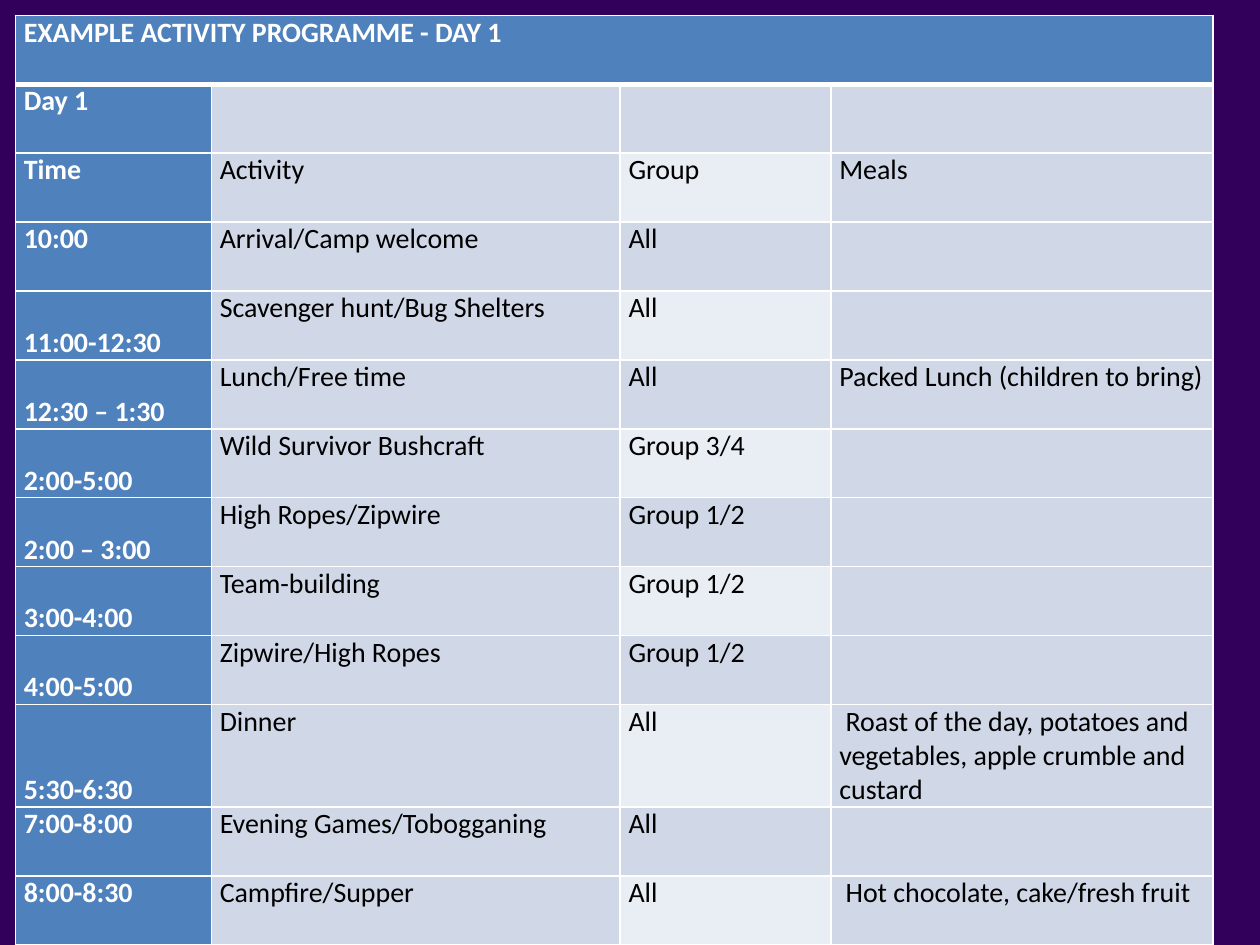
import pptx
import pptx.dml.color
import pptx.enum.text
import pptx.oxml
import pptx.oxml.ns
import pptx.util
from pptx.util import Cm

# Content
HEADING = "EXAMPLE ACTIVITY PROGRAMME - DAY 1"
PROGRAMME = [
    ("Day 1", "", "", ""),
    ("Time", "Activity", "Group", "Meals"),
    ("10:00", "Arrival/Camp welcome", "All", ""),
    ("11:00-12:30", "Scavenger hunt/Bug Shelters", "All", ""),
    ("12:30 – 1:30", "Lunch/Free time", "All", "Packed Lunch (children to bring)"),
    ("2:00-5:00", "Wild Survivor Bushcraft", "Group 3/4", ""),
    ("2:00 – 3:00", "High Ropes/Zipwire", "Group 1/2", ""),
    ("3:00-4:00", "Team-building", "Group 1/2", ""),
    ("4:00-5:00", "Zipwire/High Ropes", "Group 1/2", ""),
    ("5:30-6:30", "Dinner", "All",
     " Roast of the day, potatoes and vegetables, apple crumble and custard"),
    ("7:00-8:00", "Evening Games/Tobogganing", "All", ""),
    ("8:00-8:30", "Campfire/Supper", "All", " Hot chocolate, cake/fresh fruit"),
]
ROWS = [(HEADING, "", "", "")] + PROGRAMME
BOTTOM_TIMES = range(4, 11)  # rows whose time sits at the foot of the cell
GROUP_COLUMN = 2

# Theme and measures
THEME = {
    "background": "32005A", "accent": "4F81BD", "band": "D0D8E8",
    "light band": "E9EDF4", "line": "FFFFFF", "strong text": "FFFFFF",
    "text": "000000", "font": "Calibri", "size": 16,
    "thin line": 1, "thick line": 3,
}
COLUMN_WIDTHS = [3.95, 8.24, 4.25, 7.7]
ROW_HEIGHT = 1.39
MARGIN = 0.31
INSET = 0.17


def colour(name):
    return pptx.dml.color.RGBColor.from_string(THEME[name])


def add_border(cell, side, weight):
    line = pptx.oxml.parse_xml(
        f'<a:ln{side} {pptx.oxml.ns.nsdecls("a")} w="{pptx.util.Pt(THEME[weight])}">'
        f'<a:solidFill><a:srgbClr val="{THEME["line"]}"/></a:solidFill></a:ln{side}>')
    cell._tc.get_or_add_tcPr().append(line)


def fill_name(row, column):
    if row == 0 or column == 0:
        return "accent"
    if column == GROUP_COLUMN and row % 2 == 0:
        return "light band"
    return "band"


def format_cell(cell, row, column, words):
    # Borders: a thick rule divides the heading from the programme
    for side in "LRTB":
        is_rule = (row, side) in ((0, "B"), (1, "T"))
        add_border(cell, side, "thick line" if is_rule else "thin line")
    cell.fill.solid()
    cell.fill.fore_color.rgb = colour(fill_name(row, column))

    # Text
    cell.margin_left = cell.margin_right = Cm(INSET)
    cell.margin_top = cell.margin_bottom = Cm(0)
    if column == 0 and row in BOTTOM_TIMES:
        cell.vertical_anchor = pptx.enum.text.MSO_ANCHOR.BOTTOM
    else:
        cell.vertical_anchor = pptx.enum.text.MSO_ANCHOR.TOP
    para = cell.text_frame.paragraphs[0]
    para.text = words
    strong = row == 0 or column == 0
    for span in para.runs:
        span.font.name = THEME["font"]
        span.font.size = pptx.util.Pt(THEME["size"])
        span.font.bold = strong
        span.font.color.rgb = colour("strong text" if strong else "text")


def main():
    deck = pptx.Presentation()
    deck.slide_width, deck.slide_height = Cm(25.4), Cm(19.05)
    page = deck.slides.add_slide(deck.slide_layouts[6])
    page.background.fill.solid()
    page.background.fill.fore_color.rgb = colour("background")

    # Programme table
    table = page.shapes.add_table(
        len(ROWS), len(COLUMN_WIDTHS), Cm(MARGIN), Cm(MARGIN),
        Cm(sum(COLUMN_WIDTHS)), Cm(ROW_HEIGHT * len(ROWS))).table
    for column, width in zip(table.columns, COLUMN_WIDTHS):
        column.width = Cm(width)
    for row in table.rows:
        row.height = Cm(ROW_HEIGHT)
    for row, entries in enumerate(ROWS):
        for column, words in enumerate(entries):
            format_cell(table.cell(row, column), row, column, words)
    table.cell(0, 0).merge(table.cell(0, len(COLUMN_WIDTHS) - 1))

    deck.save("out.pptx")


if __name__ == "__main__":
    main()
